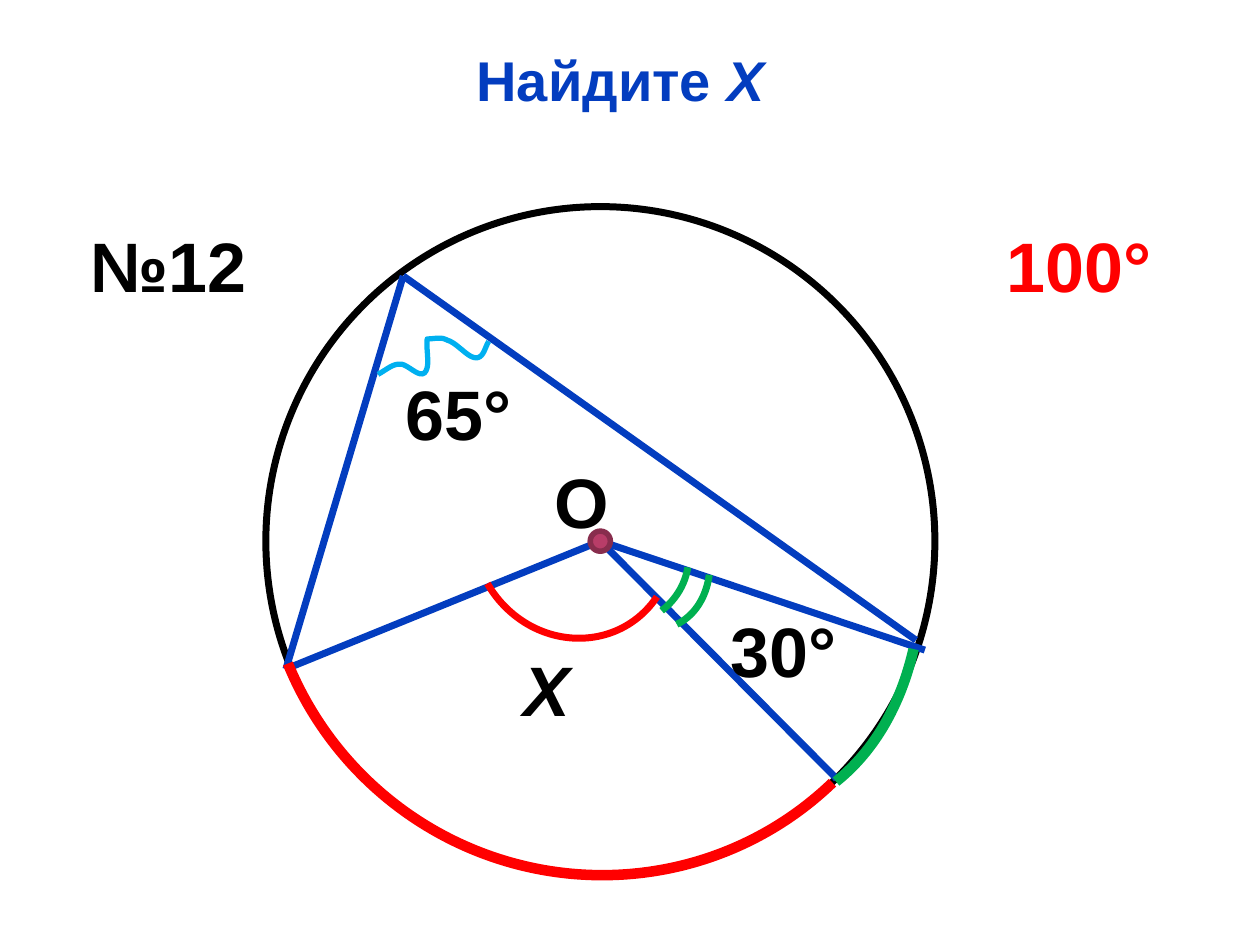
from lxml.etree import SubElement
from pptx import Presentation
from pptx.dml.color import RGBColor
from pptx.enum.shapes import MSO_CONNECTOR as CONN, MSO_SHAPE as SHAPE
from pptx.enum.text import MSO_ANCHOR as ANCHOR, MSO_AUTO_SIZE as AUTO, PP_ALIGN as ALIGN
from pptx.oxml.ns import qn
from pptx.util import Pt

COLORS = {
    "ink": "000000", "paper": "FFFFFF", "blue": "033DBF", "red": "FF0000",
    "green": "00B050", "cyan": "00B0F0", "dot": "B83D68", "dot_edge": "882D4D",
}


def rgb(name):
    return RGBColor.from_string(COLORS[name])


def style_line(sp, color, width):
    sp.line.color.rgb = rgb(color)
    sp.line.width = Pt(width)


def add_run(p, text, size=40, color="ink", italic=False):
    r = p.add_run()
    r.text = text
    r.font.name, r.font.size = "Arial", Pt(size)
    r.font.bold, r.font.italic = True, italic
    r.font.color.rgb = rgb(color)


def add_label(s, text, x, y, w, wrap=True, **fmt):
    tf = s.shapes.add_textbox(Pt(x), Pt(y), Pt(w), Pt(55.4)).text_frame
    tf.word_wrap = wrap
    add_run(tf.paragraphs[0], text, **fmt)


def add_ellipse(s, x, y, size, fill, color, width):
    sp = s.shapes.add_shape(SHAPE.OVAL, Pt(x), Pt(y), Pt(size), Pt(size))
    sp.shadow.inherit = False
    sp.fill.solid()
    sp.fill.fore_color.rgb = rgb(fill)
    style_line(sp, color, width)


def add_segment(s, x1, y1, x2, y2):
    cn = s.shapes.add_connector(CONN.STRAIGHT, Pt(x1), Pt(y1), Pt(x2), Pt(y2))
    style_line(cn, "blue", 4)
    SubElement(cn._element.spPr, qn("a:effectLst"))


def add_arc(s, x, y, w, h, rotation, start, end, color, width):
    """Draw an arc; start and end are in degrees."""
    sp = s.shapes.add_shape(SHAPE.ARC, Pt(x), Pt(y), Pt(w), Pt(h))
    sp.shadow.inherit = False
    sp.rotation = rotation
    # One adjustment unit is 100000 steps of 1/60000 degree
    sp.adjustments[0], sp.adjustments[1] = start * 0.6, end * 0.6
    sp.fill.background()
    style_line(sp, color, width)


def bezier(p0, p1, p2, p3, steps=10):
    """Return points along a cubic curve, without its first point."""
    points = []
    for i in range(1, steps + 1):
        t = i / steps
        u = 1 - t
        weights = (u ** 3, 3 * u * u * t, 3 * u * t * t, t ** 3)
        points.append(tuple(sum(k * p[axis] for k, p in zip(weights, (p0, p1, p2, p3)))
                            for axis in (0, 1)))
    return points


def add_wave(s, x, y):
    """Wavy mark of the inscribed angle."""
    nodes = [
        (127.4, 77), (125.3, 79.9), (124.6, 86.4), (120.2, 86.4),
        (115.2, 86.4), (109.4, 77.8), (103.7, 76.3),
        (100.1, 74.2), (96.5, 75.6), (92.2, 75.6),
        (91.4, 82.1), (94.3, 91.4), (90.7, 95),
        (87.1, 97.9), (80.6, 89.3), (76.3, 90),
        (72, 90), (68.4, 93.6), (64.1, 95.8),
    ]
    curve = [pt for i in range(0, len(nodes) - 1, 3) for pt in bezier(*nodes[i:i + 4])]
    fb = s.shapes.build_freeform(Pt(x + nodes[0][0]), Pt(y + nodes[0][1]))
    fb.add_line_segments([(Pt(x + px), Pt(y + py)) for px, py in curve], close=False)
    sp = fb.convert_to_shape()
    sp.shadow.inherit = False
    sp.fill.background()
    style_line(sp, "cyan", 3)


def add_title(s, x, y, w, h):
    title = s.shapes.title
    title.left, title.top, title.width, title.height = Pt(x), Pt(y), Pt(w), Pt(h)
    tf = title.text_frame
    tf.auto_size, tf.vertical_anchor = AUTO.NONE, ANCHOR.MIDDLE
    p = tf.paragraphs[0]
    p.alignment = ALIGN.CENTER
    add_run(p, "Найдите ", size=32, color="blue")
    add_run(p, "Х", size=32, color="blue", italic=True)


def add_diagram(s, x, y, size):
    """Circle with an inscribed angle and two central angles."""
    add_ellipse(s, x, y, size, "paper", "ink", 4)
    center = (size / 2, size / 2)
    top, left = (78.5, 39.6), (11.5, 264.2)
    chord_end, right, bottom = (371.5, 247.7), (376.6, 253.4), (326.2, 326.9)
    for (x1, y1), (x2, y2) in [(bottom, center), (center, left), (right, center),
                               (left, top), (chord_end, top)]:
        add_segment(s, x + x1, y + y1, x + x2, y + y2)

    for ax, ay, *rest in [
        (115.9, 131.8, 119.5, 112.3, 56.7, 339.46, 94.09, "red", 4),
        (163.4, 164.9, 78.5, 74.2, 155.7, 210.35, 255.13, "green", 4),
        (175, 140.4, 76.3, 103, 155.7, 228.96, 269.45, "green", 4),
        (-2.9, -0.7, 385.9, 381.6, 46.1, 0, 112.09, "red", 6),
        (59.8, -74.2, 298.8, 437.8, 153.2, 240.69, 264.41, "green", 6),
    ]:
        add_arc(s, x + ax, y + ay, *rest)
    add_wave(s, x, y)

    add_label(s, "30°", x + 258.5, y + 225.4, 75.6, wrap=False)
    add_label(s, "65°", x + 72.7, y + 90, 78.5)
    add_label(s, "Х", x + 140.4, y + 247.7, 44.6, italic=True)
    add_label(s, "О", x + 157.7, y + 140.4, 46, wrap=False)
    dot = 11.5
    add_ellipse(s, x + (size - dot) / 2, y + (size - dot) / 2, dot, "dot", "dot_edge", 3.15)


def main():
    prs = Presentation()
    prs.slide_width, prs.slide_height = Pt(720), Pt(540)
    s = prs.slides.add_slide(prs.slide_layouts[5])
    add_title(s, 33.8, 22.3, 641.5, 46)
    add_diagram(s, 151.9, 118.1, 382.3)
    add_label(s, "№12", 44.6, 123.8, 112.3)
    add_label(s, "100°", 568.1, 123.8, 112.3, color="red")
    prs.save("out.pptx")


if __name__ == "__main__":
    main()
